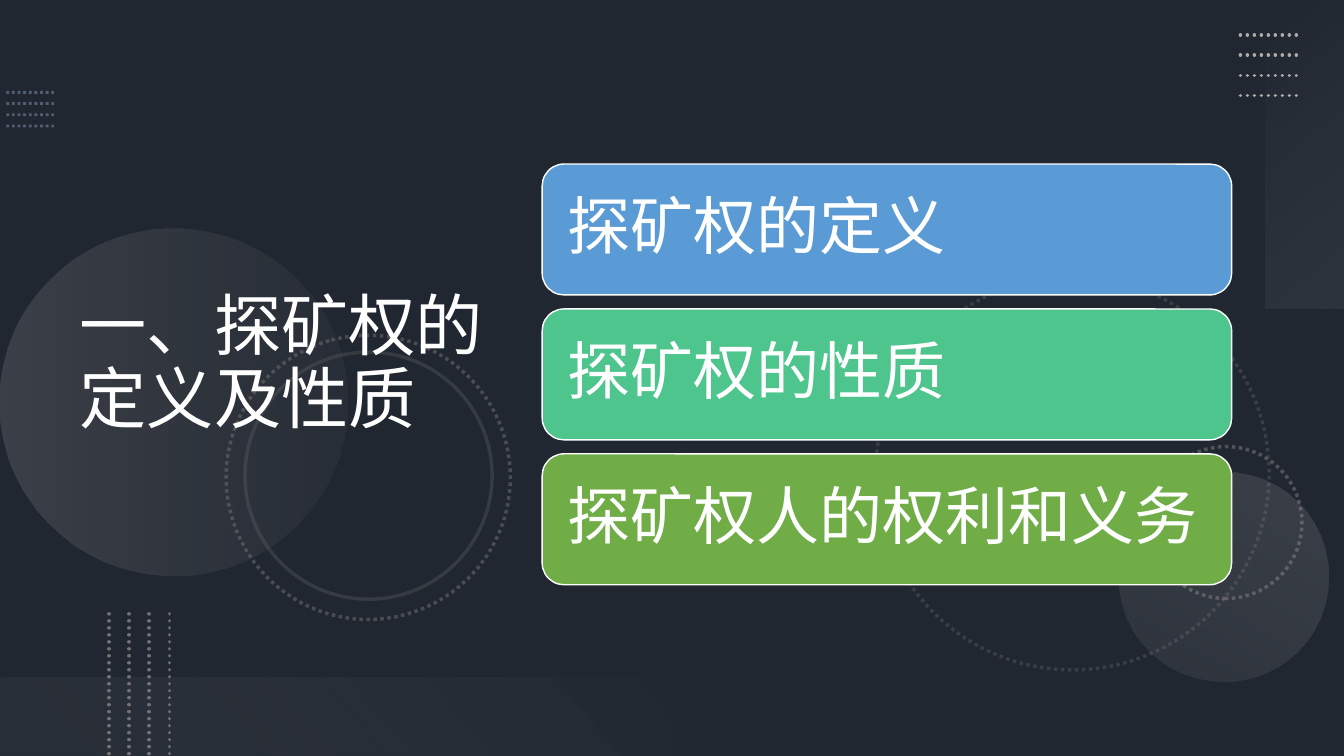
from lxml.etree import SubElement
from pptx import Presentation
from pptx.dml.color import RGBColor
from pptx.enum.dml import MSO_LINE
from pptx.enum.shapes import MSO_CONNECTOR, MSO_SHAPE
from pptx.enum.text import MSO_ANCHOR, PP_ALIGN
from pptx.oxml.ns import qn
from pptx.util import Pt

SLATE = RGBColor(0x44, 0x54, 0x6A)
BLACK = RGBColor(0x00, 0x00, 0x00)
WHITE = RGBColor(0xFF, 0xFF, 0xFF)
STEEL = RGBColor(0x84, 0x97, 0xB0)
GRAY = RGBColor(0x76, 0x71, 0x71)
SILVER = RGBColor(0xAF, 0xAB, 0xAB)
SMOKE = RGBColor(0xF5, 0xF5, 0xF5)
PEARL = RGBColor(0xF1, 0xF0, 0xF0)
BLUE = RGBColor(0x5B, 0x9B, 0xD5)
MINT = RGBColor(0x4D, 0xC5, 0x8D)
GREEN = RGBColor(0x70, 0xAD, 0x47)
WIDTH, HEIGHT = 960, 540


def set_alpha(color_element, percent):
    SubElement(color_element, qn("a:alpha"), val=str(percent * 1000))


def write_text(frame, text, size, font, color, inset):
    frame.word_wrap = True
    frame.vertical_anchor = MSO_ANCHOR.MIDDLE
    frame.margin_left = frame.margin_right = Pt(inset)
    para = frame.paragraphs[0]
    para.alignment = PP_ALIGN.LEFT
    para.line_spacing = 0.9
    span = para.add_run()
    span.text = text
    span.font.size = Pt(size)
    span.font.name = font
    span.font.color.rgb = color
    SubElement(span.font._element, qn("a:ea"), typeface=font)


class SlideBuilder:
    font = "Noto Sans CJK SC"

    def __init__(self, page):
        self.page = page

    def shape(self, kind, left, top, width, height, rotation=0):
        box = self.page.shapes.add_shape(kind, Pt(left), Pt(top), Pt(width), Pt(height))
        box.shadow.inherit = False
        box.rotation = rotation
        box.fill.background()
        box.line.fill.background()
        return box

    def veil(self, color, alpha):
        box = self.shape(MSO_SHAPE.RECTANGLE, 0, 0, WIDTH, HEIGHT)
        box.fill.solid()
        box.fill.fore_color.rgb = color
        set_alpha(box.element.xpath("./p:spPr/a:solidFill/a:srgbClr")[0], alpha)

    def gradient(self, kind, frame, rotation, angle, stops):
        box = self.shape(kind, *frame, rotation=rotation)
        box.fill.gradient()
        grad = box.element.xpath("./p:spPr/a:gradFill")[0]
        grad.clear()
        grad.set("rotWithShape", "1")
        stop_list = SubElement(grad, qn("a:gsLst"))
        for position, color, alpha in stops:
            stop = SubElement(stop_list, qn("a:gs"), pos=str(position * 1000))
            set_alpha(SubElement(stop, qn("a:srgbClr"), val=str(color)), alpha)
        SubElement(grad, qn("a:lin"), ang=str(angle * 60000), scaled="0")

    def stroke(self, item, color, width, alpha=100, dotted=True, cap="flat"):
        item.line.color.rgb = color
        item.line.width = Pt(width)
        item.element.xpath("./p:spPr/a:ln")[0].set("cap", cap)
        if dotted:
            item.line.dash_style = MSO_LINE.ROUND_DOT
        if alpha < 100:
            set_alpha(item.element.xpath("./p:spPr/a:ln/a:solidFill/a:srgbClr")[0], alpha)

    def ring(self, left, top, size, rotation, alpha, dotted=True):
        circle = self.shape(MSO_SHAPE.OVAL, left, top, size, size, rotation)
        self.stroke(circle, GRAY, 2.5, alpha, dotted)

    def dotted_lines(self, start, end, step, color, width=2.5, alpha=100, cap="rnd"):
        for index in range(4):
            dx, dy = step[0] * index, step[1] * index
            line = self.page.shapes.add_connector(
                MSO_CONNECTOR.STRAIGHT,
                Pt(start[0] + dx), Pt(start[1] + dy), Pt(end[0] + dx), Pt(end[1] + dy))
            self.stroke(line, color, width, alpha, cap=cap)
            SubElement(line.element.spPr, qn("a:effectLst"))

    def title(self, text, left, top, width, height):
        box = self.page.shapes.title
        box.left, box.top, box.width, box.height = Pt(left), Pt(top), Pt(width), Pt(height)
        write_text(box.text_frame, text, size=48, font=self.font, color=WHITE, inset=7.2)
        box.element.getparent().append(box.element)

    def card(self, text, color, left, top, width, height):
        box = self.shape(MSO_SHAPE.ROUNDED_RECTANGLE, left, top, width, height)
        box.fill.solid()
        box.fill.fore_color.rgb = color
        self.stroke(box, WHITE, 1, dotted=False)
        write_text(box.text_frame, text, size=45, font=self.font, color=WHITE, inset=13.4)


def main():
    deck = Presentation()
    deck.slide_width, deck.slide_height = Pt(WIDTH), Pt(HEIGHT)
    page = deck.slides.add_slide(deck.slide_layouts[5])
    page.background.fill.solid()
    page.background.fill.fore_color.rgb = SLATE

    builder = SlideBuilder(page)
    builder.veil(BLACK, 53)
    builder.dotted_lines((4.5, 66), (38.5, 66), (0, 8), STEEL, width=2, alpha=50, cap="flat")
    builder.ring(625.5, 197.5, 281, 75, alpha=30)
    builder.ring(821.5, 319, 108.5, 270, alpha=60)
    builder.gradient(MSO_SHAPE.OVAL, (0, 163, 248, 248), 270, 90,
                     [(0, SILVER, 20), (100, GRAY, 10)])
    builder.gradient(MSO_SHAPE.OVAL, (799, 336.5, 150, 150), 210, 90,
                     [(0, SILVER, 10), (100, SILVER, 20)])
    builder.ring(161.5, 239.5, 203, 75, alpha=50)
    builder.ring(175, 251.5, 176.5, 75, alpha=25, dotted=False)
    builder.gradient(MSO_SHAPE.RECTANGLE, (822, 82, 220.5, 56), 270, 140,
                     [(0, SMOKE, 0), (100, SILVER, 10)])
    builder.dotted_lines((886, 25), (929.5, 25), (0, 14.4), SILVER)
    builder.gradient(MSO_SHAPE.RECTANGLE, (0, 484, 480, 56), 180, 140,
                     [(10, GRAY, 10), (100, PEARL, 0)])
    builder.dotted_lines((77.8, 438.5), (77.8, HEIGHT), (14.4, 0), GRAY)

    builder.title("一、探矿权的定义及性质", 49.7, 38.9, 330.5, 444)
    cards = [("探矿权的定义", BLUE), ("探矿权的性质", MINT), ("探矿权人的权利和义务", GREEN)]
    for index, (text, color) in enumerate(cards):
        builder.card(text, color, 387.3, 117.2 + 103.5 * index, 492.5, 93.5)

    deck.save("out.pptx")


if __name__ == "__main__":
    main()
